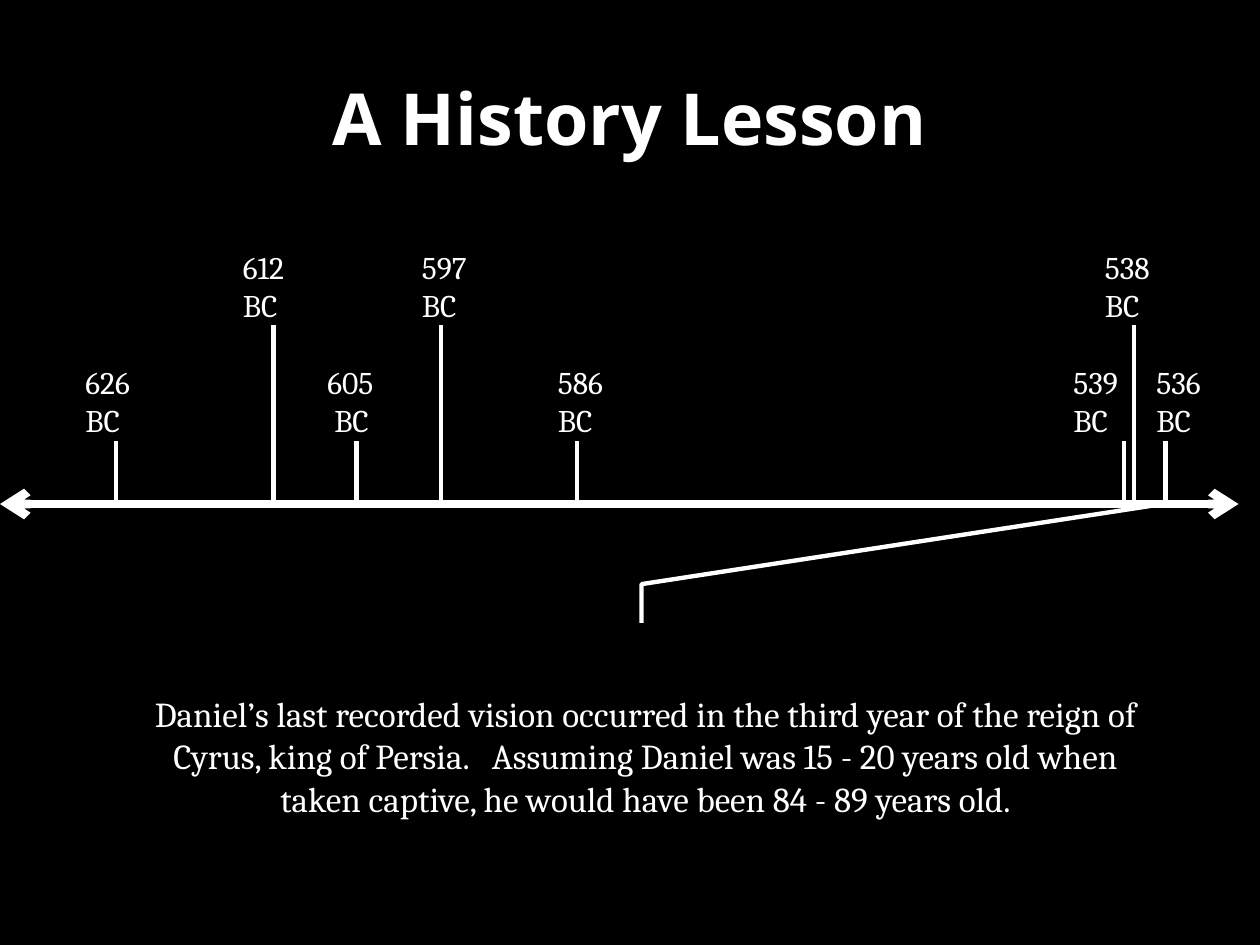
from lxml.etree import SubElement
from pptx import Presentation
from pptx.dml.color import RGBColor
from pptx.enum.shapes import MSO_CONNECTOR, MSO_SHAPE
from pptx.enum.text import MSO_ANCHOR, MSO_AUTO_SIZE, PP_ALIGN
from pptx.oxml.ns import qn
from pptx.util import Inches, Pt

WHITE, BLACK = "FFFFFF", "000000"
AXIS = 4
LOW, HIGH = (2.83, 3.5), (1.92, 2.58)  # label top, tick top

# label, label left, label width, tick x, level
DATES = [
    ("626\nBC", 0.58, 0.58, 0.92, LOW),
    ("612\nBC", 1.83, 0.58, 2.17, HIGH),
    ("605\n BC", 2.5, 0.67, 2.83, LOW),
    ("597\nBC", 3.25, 0.58, 3.5, HIGH),
    ("586\nBC", 4.33, 0.58, 4.58, LOW),
    ("539\nBC", 8.42, 0.58, 8.92, LOW),
    ("538\nBC", 8.67, 0.58, 9, HIGH),
    ("536\nBC", 9.08, 0.58, 9.25, LOW),
]
NOTE = ("Daniel’s last recorded vision occurred in the third year of the reign "
        "of Cyrus, king of Persia.   Assuming Daniel was 15 - 20 years old when "
        "taken captive, he would have been 84 - 89 years old.")
BENDS = (-0.028, 0.496, -0.182, 0.496, -0.5, 0.998)


def color(code):
    return RGBColor.from_string(code)


def place(shape, *box):
    shape.left, shape.top, shape.width, shape.height = map(Inches, box)


def write(shape, text, size, font="Cambria", bold=False, align=PP_ALIGN.LEFT):
    frame = shape.text_frame
    frame.text = text
    frame.word_wrap = True
    for para in frame.paragraphs:
        para.alignment = align
        for run in para.runs:
            run.font.name, run.font.size = font, Pt(size)
            run.font.bold = bold
            run.font.color.rgb = color(WHITE)
    return frame


def add_line(slide, x1, y1, x2, y2, width=2.5, arrows=False):
    line = slide.shapes.add_connector(
        MSO_CONNECTOR.STRAIGHT, *map(Inches, (x1, y1, x2, y2)))
    line.line.color.rgb = color(WHITE)
    line.line.width = Pt(width)
    props = line._element.spPr
    if arrows:
        for end in ("a:headEnd", "a:tailEnd"):
            SubElement(props.find(qn("a:ln")), qn(end), type="arrow")
    SubElement(props, qn("a:effectLst"))


def add_date(slide, text, left, width, x, level):
    top, tick = level
    add_line(slide, x, tick, x, AXIS)
    box = slide.shapes.add_textbox(*map(Inches, (left, top, width, 0.71)))
    write(box, text, 18).auto_size = MSO_AUTO_SIZE.SHAPE_TO_FIT_TEXT


def add_note(slide):
    note = slide.shapes.add_shape(
        MSO_SHAPE.LINE_CALLOUT_2_NO_BORDER, *map(Inches, (1, 5, 8.25, 2)))
    for i, bend in enumerate(BENDS):
        note.adjustments[i] = bend
    note.shadow.inherit = False
    note.fill.background()
    note.line.color.rgb = color(WHITE)
    note.line.width = Pt(2.5)
    frame = write(note, NOTE, 20, align=PP_ALIGN.CENTER)
    frame.vertical_anchor = MSO_ANCHOR.MIDDLE


def add_title(slide):
    title = slide.shapes.title
    place(title, 0.5, 0.3, 9, 1.25)
    frame = write(title, "A History Lesson", 41, "Open Sans", True, PP_ALIGN.CENTER)
    frame.vertical_anchor = MSO_ANCHOR.MIDDLE


def main():
    deck = Presentation()
    deck.slide_width, deck.slide_height = Inches(10), Inches(7.5)
    slide = deck.slides.add_slide(deck.slide_layouts[5])
    fill = slide.background.fill
    fill.solid()
    fill.fore_color.rgb = color(BLACK)
    add_title(slide)
    for date in DATES:
        add_date(slide, *date)
    add_line(slide, 0, AXIS, 9.83, AXIS, 5, arrows=True)
    add_note(slide)
    deck.save("out.pptx")


if __name__ == "__main__":
    main()
